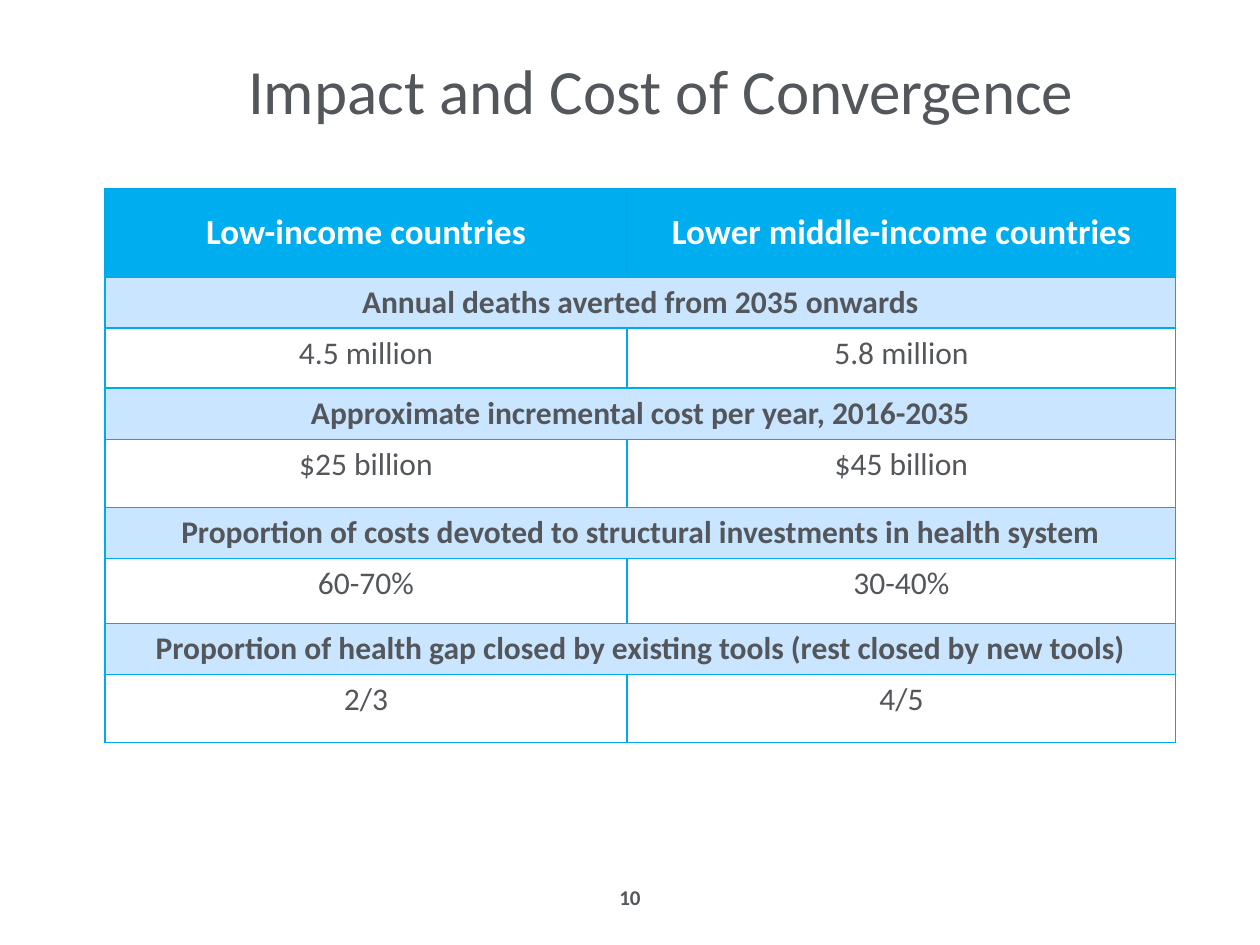
from lxml import etree
from pptx import Presentation
from pptx.dml.color import RGBColor
from pptx.enum.text import MSO_ANCHOR, PP_ALIGN
from pptx.oxml.ns import qn
from pptx.util import Emu, Pt

CENTER = PP_ALIGN.CENTER
TOP, MIDDLE = MSO_ANCHOR.TOP, MSO_ANCHOR.MIDDLE

PX = 914400 // 126
FONT = "Calibri"
GREY = RGBColor(0x53, 0x56, 0x5A)
WHITE = RGBColor(0xFF, 0xFF, 0xFF)
HEADER_BLUE = RGBColor(0x00, 0xAE, 0xEF)
BAND_BLUE = RGBColor(0xCA, 0xE5, 0xFF)
BORDER_BLUE = RGBColor(0x00, 0xAA, 0xEA)

TITLE_ONLY_LAYOUT = 5
COLUMN_WIDTHS = (522, 549)
HEADER_HEIGHT, BAND_HEIGHT = 88, 51
HEADERS = ("Low-income countries", "Lower middle-income countries")
# Band heading, values for the two columns, height of the value row
SECTIONS = (
    ("Annual deaths averted from 2035 onwards",
     ("4.5 million", "5.8 million"), 60),
    ("Approximate incremental cost per year, 2016-2035",
     ("$25 billion", "$45 billion"), 68),
    ("Proportion of costs devoted to structural investments in health system",
     ("60-70%", "30-40%"), 65),
    ("Proportion of health gap closed by existing tools (rest closed by new tools)",
     ("2/3", "4/5"), 68),
)


def px(length):
    return Emu(length * PX)


def write_text(text_frame, text, *, size, color=GREY, bold=False):
    """Put one centred, formatted paragraph in a text frame."""
    paragraph = text_frame.paragraphs[0]
    paragraph.alignment = CENTER
    run = paragraph.add_run()
    run.text = text
    run.font.name = FONT
    run.font.size = Pt(size)
    run.font.bold = bold
    run.font.color.rgb = color


def format_cell(cell, fill, anchor=TOP):
    """Give a cell its four borders, fill and vertical anchor."""
    properties = cell._tc.get_or_add_tcPr()
    for side in ("a:lnL", "a:lnR", "a:lnT", "a:lnB"):
        line = etree.SubElement(properties, qn(side), w=str(Pt(0.75)))
        solid = etree.SubElement(line, qn("a:solidFill"))
        etree.SubElement(solid, qn("a:srgbClr"), val=str(BORDER_BLUE))
    cell.fill.solid()
    cell.fill.fore_color.rgb = fill
    cell.vertical_anchor = anchor


def add_title(slide, left, top, width, height):
    title = slide.shapes.title
    title.left, title.top = px(left), px(top)
    title.width, title.height = px(width), px(height)
    title.text_frame.vertical_anchor = MIDDLE
    write_text(title.text_frame, "Impact and Cost of Convergence", size=36)


def add_impact_table(slide, left, top):
    heights = [HEADER_HEIGHT]
    for _, _, value_height in SECTIONS:
        heights += [BAND_HEIGHT, value_height]
    frame = slide.shapes.add_table(
        len(heights), len(COLUMN_WIDTHS), px(left), px(top),
        px(sum(COLUMN_WIDTHS)), px(sum(heights)))
    table = frame.table
    for column, width in zip(table.columns, COLUMN_WIDTHS):
        column.width = px(width)
    for row, height in zip(table.rows, heights):
        row.height = px(height)

    # Header row
    for column, header in enumerate(HEADERS):
        cell = table.cell(0, column)
        format_cell(cell, HEADER_BLUE, MIDDLE)
        write_text(cell.text_frame, header, size=20, color=WHITE, bold=True)

    # Each section: a merged band, then a row of values
    for index, (heading, values, _) in enumerate(SECTIONS):
        band_row = 1 + 2 * index
        band = table.cell(band_row, 0)
        band.merge(table.cell(band_row, 1))
        write_text(band.text_frame, heading, size=18, bold=True)
        for column, value in enumerate(values):
            format_cell(table.cell(band_row, column), BAND_BLUE)
            cell = table.cell(band_row + 1, column)
            format_cell(cell, WHITE)
            write_text(cell.text_frame, value, size=18)


def add_page_number(slide, left, top, width, height):
    box = slide.shapes.add_textbox(px(left), px(top), px(width), px(height))
    box.text_frame.word_wrap = True
    box.text_frame.vertical_anchor = MIDDLE
    write_text(box.text_frame, "10", size=12, bold=True)


def main():
    presentation = Presentation()
    presentation.slide_width, presentation.slide_height = px(1260), px(945)
    slide = presentation.slides.add_slide(
        presentation.slide_layouts[TITLE_ONLY_LAYOUT])
    add_title(slide, 94, 10, 1134, 158)
    add_impact_table(slide, 105, 189)
    add_page_number(slide, 483, 872, 294, 50)
    presentation.save("out.pptx")


if __name__ == "__main__":
    main()
